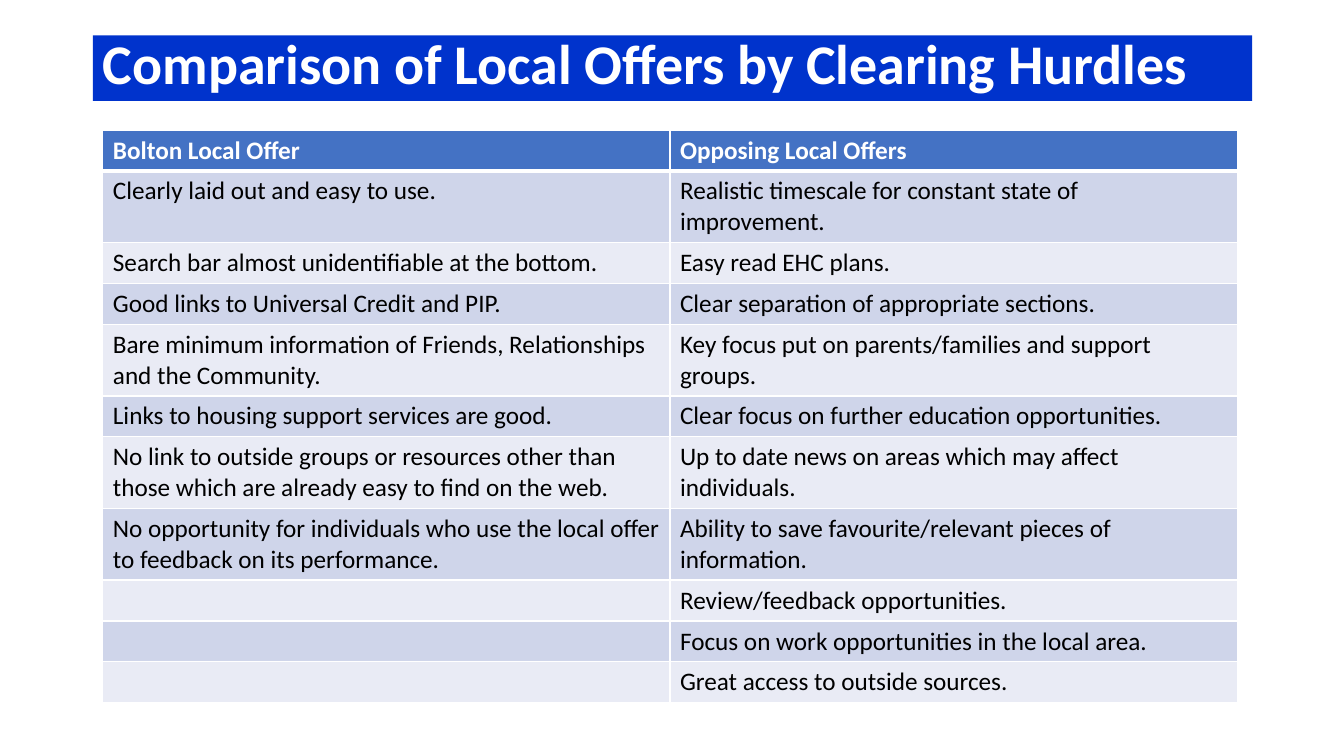
from dataclasses import dataclass

from lxml.etree import SubElement
from pptx import Presentation
from pptx.dml.color import RGBColor
from pptx.enum.text import MSO_ANCHOR, MSO_AUTO_SIZE, PP_ALIGN
from pptx.oxml.ns import qn
from pptx.util import Inches, Pt


@dataclass(frozen=True)
class Theme:
    font: str = "Calibri"
    white: str = "FFFFFF"
    black: str = "000000"
    banner: str = "0033CC"
    header: str = "4472C4"
    bands: tuple = ("CFD5EA", "E9EBF5")
    title_size: int = 40
    table_size: int = 18
    thin_line: int = 1
    thick_line: int = 3


THEME = Theme()

TITLE = "Comparison of Local Offers by Clearing Hurdles"
OFFERS = [
    ("Bolton Local Offer", "Opposing Local Offers"),
    ("Clearly laid out and easy to use.",
     "Realistic timescale for constant state of improvement."),
    ("Search bar almost unidentifiable at the bottom.", "Easy read EHC plans."),
    ("Good links to Universal Credit and PIP.",
     "Clear separation of appropriate sections."),
    ("Bare minimum information of Friends, Relationships and the Community.",
     "Key focus put on parents/families and support groups."),
    ("Links to housing support services are good.",
     "Clear focus on further education opportunities."),
    ("No link to outside groups or resources other than those which are "
     "already easy to find on the web.",
     "Up to date news on areas which may affect individuals."),
    ("No opportunity for individuals who use the local offer to feedback on "
     "its performance.",
     "Ability to save favourite/relevant pieces of information."),
    ("", "Review/feedback opportunities."),
    ("", "Focus on work opportunities in the local area."),
    ("", "Great access to outside sources."),
]


def format_runs(frame, size, color, bold):
    for para in frame.paragraphs:
        for span in para.runs:
            span.font.name = THEME.font
            span.font.size = Pt(size)
            span.font.bold = bold
            span.font.color.rgb = RGBColor.from_string(color)


def add_border(cell, side, width):
    line = SubElement(cell._tc.get_or_add_tcPr(), qn(f"a:ln{side}"), w=str(Pt(width)))
    fill = SubElement(line, qn("a:solidFill"))
    SubElement(fill, qn("a:srgbClr"), val=THEME.white)


def format_cell(cell, row):
    # Borders go before the fill; the rule under the header is thick
    thick_side = {0: "B", 1: "T"}.get(row)
    for side in "LRTB":
        add_border(cell, side, THEME.thick_line if side == thick_side else THEME.thin_line)
    is_header = row == 0
    color = THEME.header if is_header else THEME.bands[(row - 1) % 2]
    cell.fill.solid()
    cell.fill.fore_color.rgb = RGBColor.from_string(color)
    format_runs(cell.text_frame, THEME.table_size,
                THEME.white if is_header else THEME.black, is_header)


def place_title(page, left, top, width, height):
    title = page.shapes.title
    title.left, title.top, title.width, title.height = left, top, width, height
    title.fill.solid()
    title.fill.fore_color.rgb = RGBColor.from_string(THEME.banner)
    frame = title.text_frame
    frame.text = TITLE
    frame.word_wrap = True
    frame.auto_size = MSO_AUTO_SIZE.NONE
    frame.vertical_anchor = MSO_ANCHOR.MIDDLE
    para = frame.paragraphs[0]
    para.alignment = PP_ALIGN.LEFT
    para.line_spacing = 0.8
    format_runs(frame, THEME.title_size, THEME.white, True)


def add_offer_table(page, left, top, width, row_height):
    rows, columns = len(OFFERS), len(OFFERS[0])
    table = page.shapes.add_table(
        rows, columns, left, top, width, row_height * rows).table
    for column in table.columns:
        column.width = width // columns
    for row, offers in enumerate(OFFERS):
        table.rows[row].height = row_height
        for column, text in enumerate(offers):
            cell = table.cell(row, column)
            cell.text_frame.text = text
            format_cell(cell, row)


def build_comparison_slide(deck):
    page = deck.slides.add_slide(deck.slide_layouts.get_by_name("Title Only"))
    # Title banner
    place_title(page, Inches(0.92), Inches(0.35), Inches(11.5), Inches(0.65))
    # Two-column comparison
    add_offer_table(page, Inches(1.02), Inches(1.29), Inches(11.25), Inches(0.4))


def main():
    deck = Presentation()
    deck.slide_width, deck.slide_height = Inches(13.33), Inches(7.5)
    build_comparison_slide(deck)
    deck.save("out.pptx")


if __name__ == "__main__":
    main()
